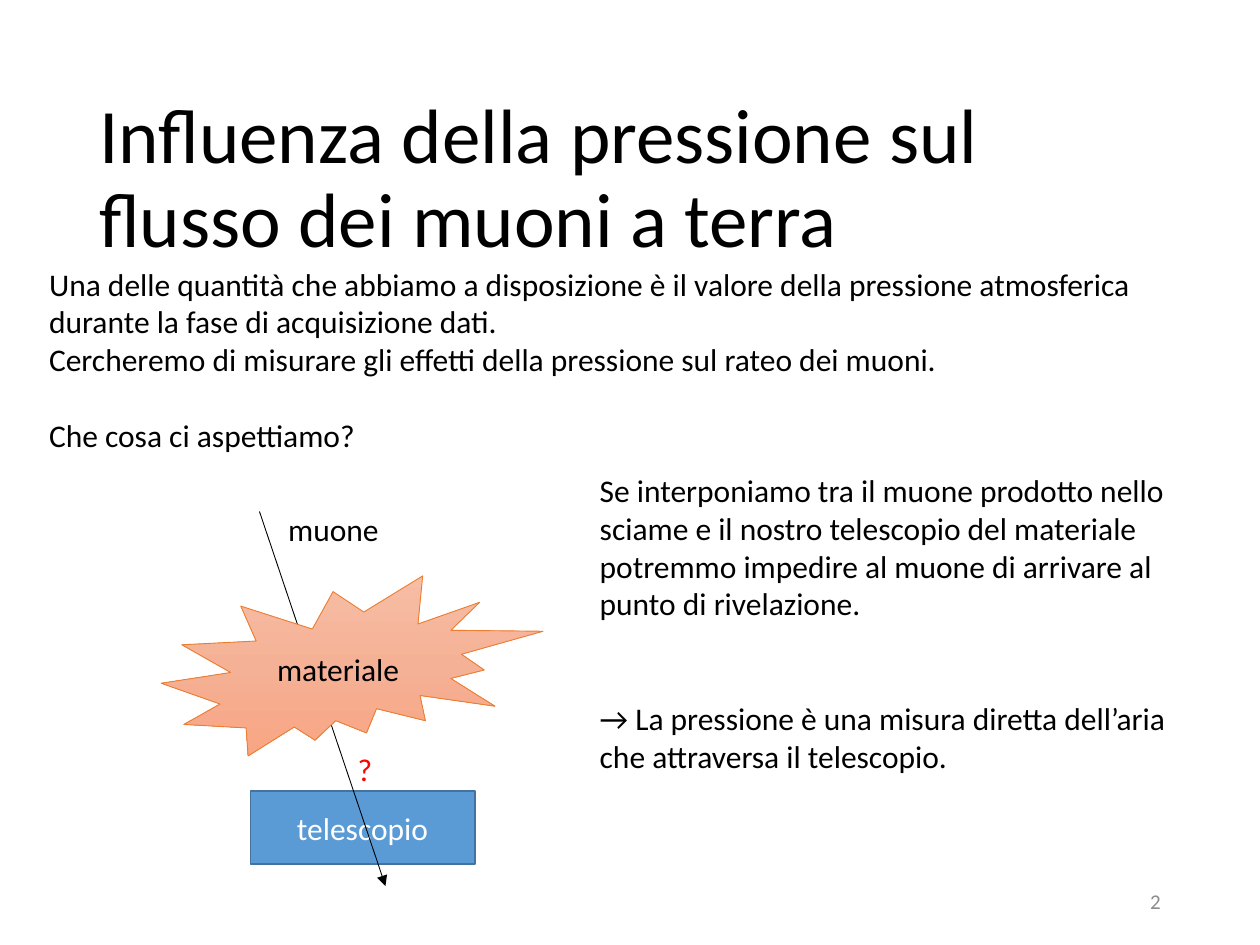
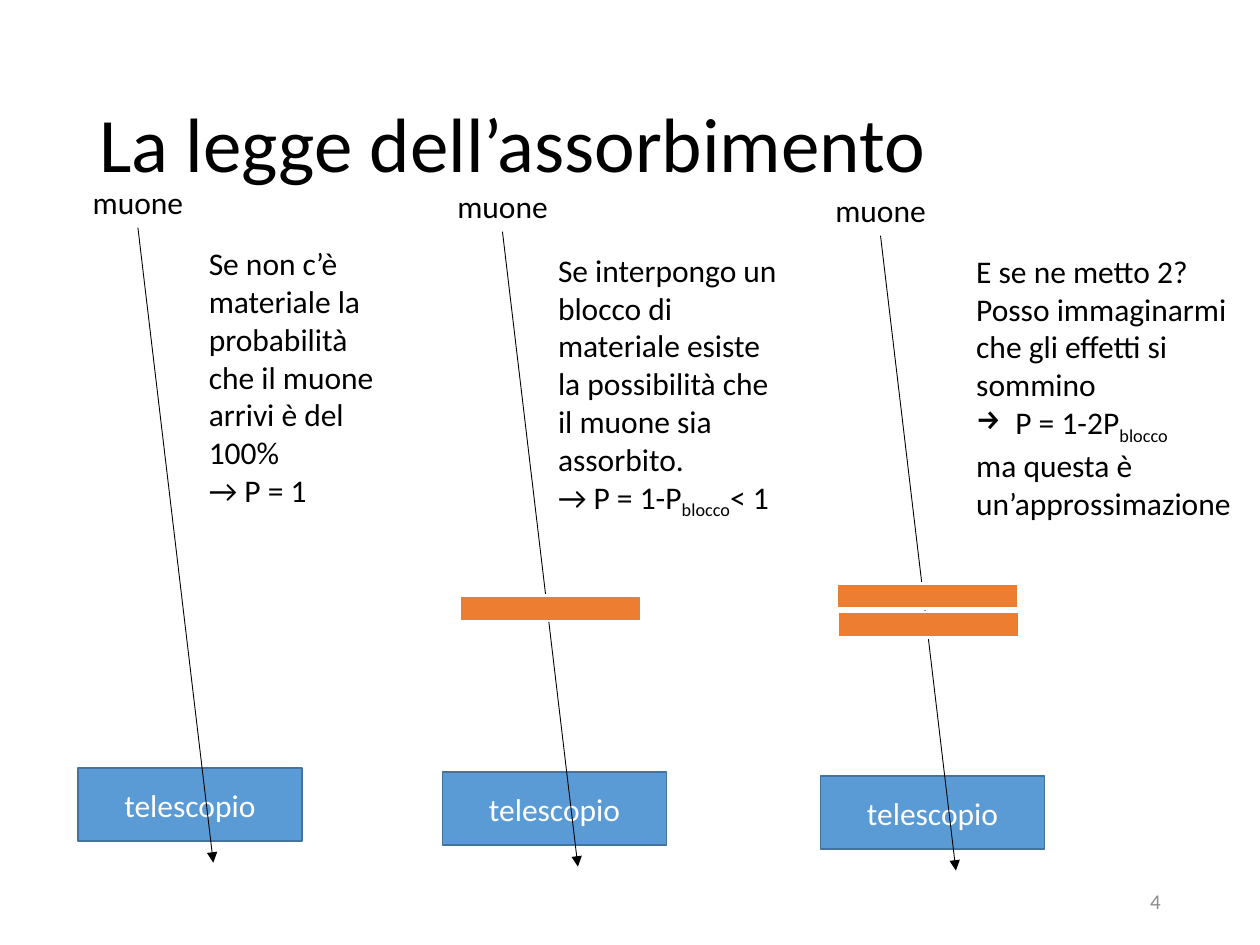
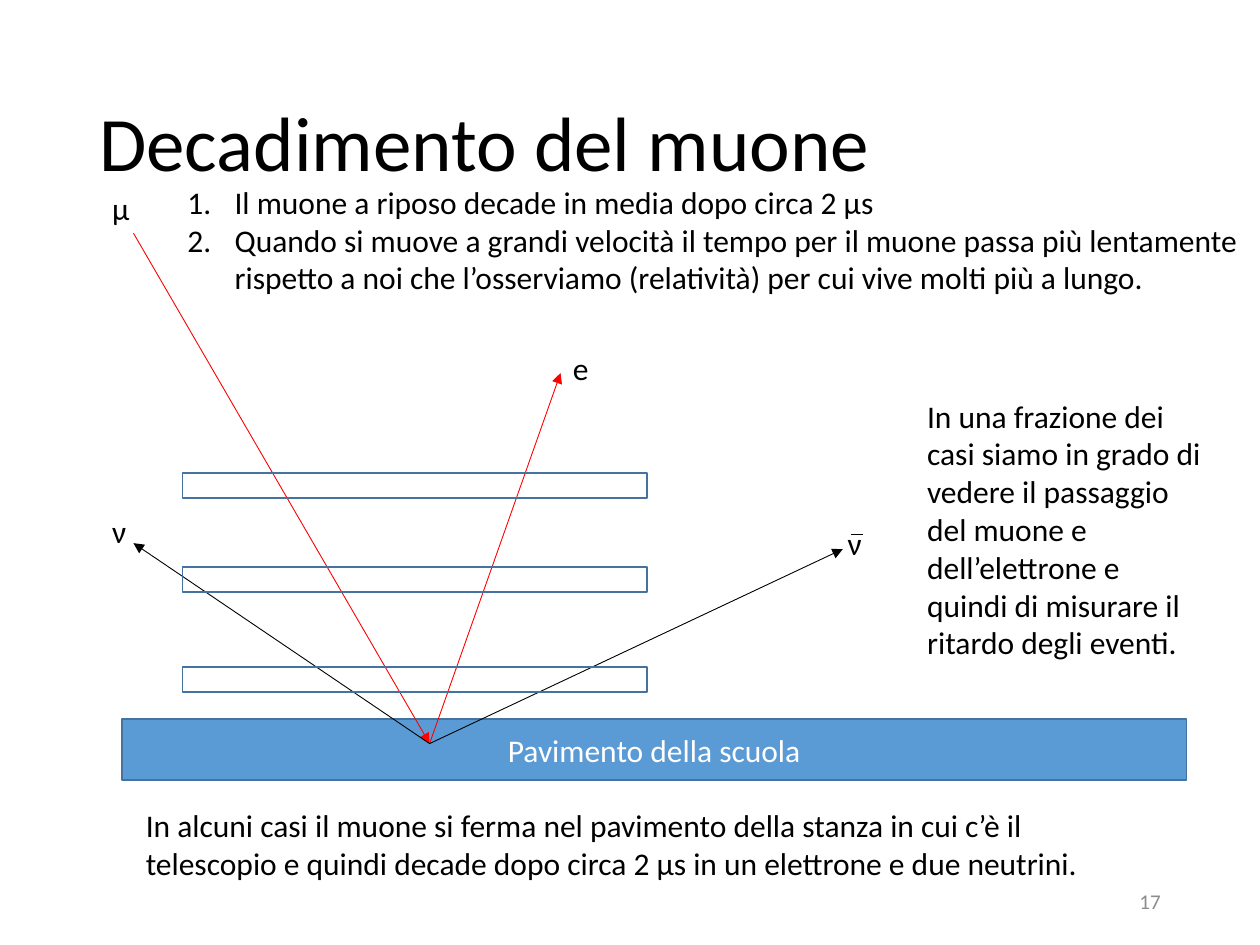
from copy import deepcopy
from dataclasses import dataclass

from lxml import etree
from pptx import Presentation
from pptx import util as u
from pptx.dml import color
from pptx.enum import shapes, text
from pptx.oxml import ns

SHAPE = shapes.MSO_SHAPE
ALIGN = text.PP_ALIGN
ANCHOR = text.MSO_ANCHOR


@dataclass(frozen=True)
class Theme:
    font: str = "Calibri"
    title_size: float = 44
    body_size: float = 18
    number_size: float = 12
    line_height: float = 22
    hairline: float = 0.5
    ink: str = "000000"
    white: str = "FFFFFF"
    grey: str = "8C8C8C"
    red: str = "FF0000"
    blue: str = "5B9BD5"
    blue_edge: str = "43739E"
    orange: str = "ED7D31"
    material: tuple = ((0, "F7BDA5"), (0.5, "F5B196"), (1, "F8A582"))


@dataclass
class Para:
    """A paragraph; gap counts the free lines above it."""
    text: str
    sub: str = ""
    tail: str = ""
    gap: int = 0
    bullet: str = ""
    indent: float = 0


def rgb(value):
    return color.RGBColor.from_string(value)


def assign(obj, **values):
    for name, value in values.items():
        setattr(obj, name, value)


class Deck:
    """Holds the theme and the slide being drawn; lengths are in cm."""

    def __init__(self, theme):
        self.theme = theme
        self.prs = Presentation()
        assign(self.prs, slide_width=u.Cm(25.4), slide_height=u.Cm(19.05))
        self.slide = None

    # Slide frame: title and page number
    def new_slide(self, title, title_top, number):
        t = self.theme
        self.slide = self.prs.slides.add_slide(self.prs.slide_layouts[6])
        s = self.text((1.75, title_top, 21.9, 3.68), title, size=t.title_size,
                      anchor=ANCHOR.MIDDLE, grow=False)
        s.text_frame.paragraphs[0].line_spacing = 0.9
        self.text((17.93, 17.65, 5.72, 1.02), number, size=t.number_size, ink=t.grey,
                  align=ALIGN.RIGHT, anchor=ANCHOR.MIDDLE, grow=False)

    # Text
    def fill_text(self, tf, paras, size=None, ink=None, align=ALIGN.LEFT):
        t = self.theme
        for i, para in enumerate(paras):
            para = Para(para) if isinstance(para, str) else para
            p = tf.paragraphs[0] if i == 0 else tf.add_paragraph()
            p.alignment = align
            if para.gap:
                p.space_before = u.Pt(para.gap * t.line_height)
            if para.bullet:
                self.bullet(p, para)
            for part, is_sub in ((para.text, False), (para.sub, True), (para.tail, False)):
                if part:
                    r = p.add_run()
                    r.text = part
                    assign(r.font, name=t.font, size=u.Pt(size or t.body_size))
                    r.font.color.rgb = rgb(ink or t.ink)
                    if is_sub:
                        r._r.get_or_add_rPr().set("baseline", "-25000")

    def bullet(self, p, para):
        pPr = p._p.get_or_add_pPr()
        pPr.set("marL", str(u.Cm(para.indent)))
        pPr.set("indent", str(-u.Cm(para.indent)))
        if para.bullet == "1.":
            etree.SubElement(pPr, ns.qn("a:buAutoNum"), type="arabicPeriod")
        else:
            etree.SubElement(pPr, ns.qn("a:buChar"), char=para.bullet)

    def text(self, box, *paras, wrap=True, anchor=ANCHOR.TOP, grow=True, **style):
        s = self.slide.shapes.add_textbox(*map(u.Cm, box))
        fit = text.MSO_AUTO_SIZE.SHAPE_TO_FIT_TEXT if grow else text.MSO_AUTO_SIZE.NONE
        assign(s.text_frame, word_wrap=wrap, vertical_anchor=anchor, auto_size=fit)
        self.fill_text(s.text_frame, paras, **style)
        return s

    def label(self, x, y, word, width=0.85, **style):
        self.text((x, y, width, 1.02), word, wrap=False, **style)

    # Shapes
    def shape(self, box, fill=None, edge=None, weight=1.0, caption=None, ink=None,
              kind=SHAPE.RECTANGLE):
        s = self.slide.shapes.add_shape(kind, *map(u.Cm, box))
        s.shadow.inherit = False
        if fill:
            s.fill.solid()
            s.fill.fore_color.rgb = rgb(fill)
        else:
            s.fill.background()
        s.line.color.rgb = rgb(edge or self.theme.blue_edge)
        s.line.width = u.Pt(weight)
        if caption:
            s.text_frame.vertical_anchor = ANCHOR.MIDDLE
            self.fill_text(s.text_frame, [caption], ink=ink or self.theme.white,
                           align=ALIGN.CENTER)
        return s

    def telescope(self, x, y):
        self.shape((x, y, 4.52, 1.47), self.theme.blue, caption="telescopio")

    def block(self, x, y):
        self.shape((x, y, 3.66, 0.51), self.theme.orange, self.theme.white, 1.5)

    def burst(self, box, caption):
        t = self.theme
        s = self.shape(box, edge=t.orange, weight=t.hairline, caption=caption, ink=t.ink,
                       kind=SHAPE.EXPLOSION2)
        s.fill.gradient()
        s.fill.gradient_angle = 270
        stops = s._element.spPr.find(".//" + ns.qn("a:gsLst"))
        stops.insert(1, deepcopy(stops[0]))
        for stop, (position, shade) in zip(s.fill.gradient_stops, t.material):
            stop.position = position
            stop.color.rgb = rgb(shade)

    # Lines and arrows
    def line(self, start, end, ink=None, arrow=True):
        s = self.slide.shapes.add_connector(shapes.MSO_CONNECTOR.STRAIGHT,
                                            *map(u.Cm, (*start, *end)))
        s.line.color.rgb = rgb(ink or self.theme.ink)
        s.line.width = u.Pt(self.theme.hairline)
        spPr = s._element.spPr
        if arrow:
            etree.SubElement(spPr.find(ns.qn("a:ln")), ns.qn("a:tailEnd"), type="triangle")
        etree.SubElement(spPr, ns.qn("a:effectLst"))


def pressure_slide(deck):
    deck.new_slide("Influenza della pressione sul flusso dei muoni a terra", 1.8, "2")
    deck.text((0.74, 5.21, 23.8, 4.11),
              "Una delle quantità che abbiamo a disposizione è il valore della pressione "
              "atmosferica durante la fase di acquisizione dati.",
              "Cercheremo di misurare gli effetti della pressione sul rateo dei muoni.",
              Para("Che cosa ci aspettiamo?", gap=1))
    # Muon crossing the material
    deck.telescope(5.05, 15.95)
    deck.line((5.23, 10.31), (7.77, 17.86))
    deck.label(5.56, 10.16, "muone", 2.36)
    deck.burst((3.25, 11.61, 7.7, 3.63), "materiale")
    deck.label(6.96, 14.99, "?", ink=deck.theme.red)
    deck.text((11.84, 9.37, 12.12, 6.4),
              "Se interponiamo tra il muone prodotto nello sciame e il nostro telescopio del "
              "materiale potremmo impedire al muone di arrivare al punto di rivelazione.",
              Para("→ La pressione è una misura diretta dell’aria che attraversa il "
                   "telescopio.", gap=2))


def absorption_slide(deck):
    deck.new_slide("La legge dell’assorbimento", 1.14, "4")
    # Three set-ups, each with a telescope, a muon and its label
    for x, y in ((1.57, 15.49), (8.92, 15.57), (16.54, 15.65)):
        deck.telescope(x, y)
        deck.line((x + 1.21, y - 10.9), (x + 2.73, y + 1.9))
        deck.label(x + 0.05, y - 11.93, "muone", 2.36)
    # Absorbing blocks
    for x, y in ((9.27, 12.01), (16.89, 12.34), (16.87, 11.76)):
        deck.block(x, y)
    # Explanations
    deck.text((3.96, 4.8, 3.86, 5.64),
              "Se non c’è materiale la probabilità che il muone arrivi è del 100%",
              "→ P = 1")
    deck.text((11, 4.93, 5.05, 5.64),
              "Se interpongo un blocco di materiale esiste la possibilità che il muone sia "
              "assorbito.",
              Para("→ P = 1-P", "blocco", "< 1"))
    deck.text((19.43, 4.95, 5.66, 5.64),
              "E se ne metto 2?",
              "Posso immaginarmi che gli effetti si sommino",
              Para("P = 1-2P", "blocco", bullet="→", indent=0.79),
              "ma questa è un’approssimazione")


def decay_slide(deck):
    red = deck.theme.red
    deck.new_slide("Decadimento del muone", 1.12, "17")
    facts = ("Il muone a riposo decade in media dopo circa 2 μs",
             "Quando si muove a grandi velocità il tempo per il muone passa più lentamente "
             "rispetto a noi che l’osserviamo (relatività) per cui vive molti più a lungo.")
    deck.text((3.53, 3.56, 22.07, 2.57),
              *(Para(fact, bullet="1.", indent=0.95) for fact in facts))
    deck.shape((2.46, 14.5, 21.46, 1.22), deck.theme.blue, caption="Pavimento della scuola")
    # Muon stopping in the floor and its decay products
    stop = (8.66, 14.99)
    deck.line((2.69, 4.7), stop, red)
    for tip, ink in (((11.3, 7.52), red), ((2.69, 10.95), None), ((16.99, 11.07), None)):
        deck.line(stop, tip, ink)
    for x, y, particle in ((2.01, 3.68, "μ"), (11.3, 6.91, "e"),
                           (2.01, 10.19, "ν"), (16.84, 10.44, "ν")):
        deck.label(x, y, particle)
    deck.line((17.15, 10.77), (17.4, 10.77), arrow=False)
    # Detector planes
    for y in (9.53, 11.43, 13.44):
        deck.shape((3.68, y, 9.37, 0.51))
    deck.text((2.69, 16.13, 20.8, 1.8),
              "In alcuni casi il muone si ferma nel pavimento della stanza in cui c’è il "
              "telescopio e quindi decade dopo circa 2 μs in un elettrone e due neutrini.")
    deck.text((18.44, 7.87, 6.1, 5.64),
              "In una frazione dei casi siamo in grado di vedere il passaggio del muone e "
              "dell’elettrone e quindi di misurare il ritardo degli eventi.")


def main():
    deck = Deck(Theme())
    pressure_slide(deck)
    absorption_slide(deck)
    decay_slide(deck)
    deck.prs.save("out.pptx")


if __name__ == "__main__":
    main()
